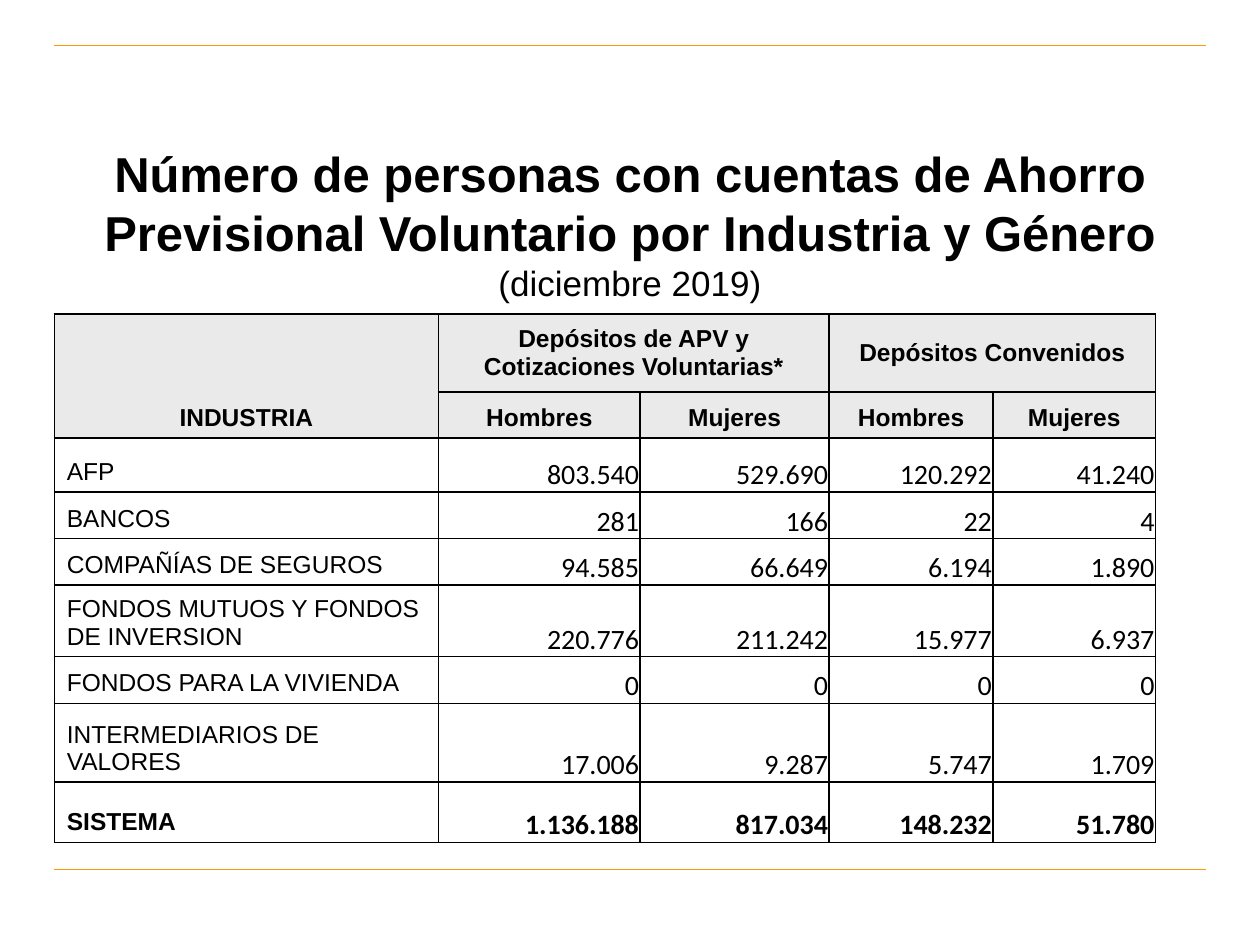
import pptx
import pptx.util
import pptx.dml.color
import pptx.enum.shapes
import pptx.enum.text
from lxml import etree

Pt = pptx.util.Pt
RGBColor = pptx.dml.color.RGBColor
ALIGN = pptx.enum.text.PP_ALIGN
ANCHOR = pptx.enum.text.MSO_ANCHOR

BLACK = RGBColor(0x00, 0x00, 0x00)
WHITE = RGBColor(0xFF, 0xFF, 0xFF)
GREY = RGBColor(0xEA, 0xEA, 0xEA)
ORANGE = RGBColor(0xFF, 0x99, 0x00)
NS = "http://schemas.openxmlformats.org/drawingml/2006/main"

# Content
TITLE = "Número de personas con cuentas de Ahorro Previsional Voluntario por Industria y Género"
SUBTITLE = "(diciembre 2019)"
ROWS = [
    ("INDUSTRIA", "Depósitos de APV y Cotizaciones Voluntarias*", "", "Depósitos Convenidos", ""),
    ("", "Hombres", "Mujeres", "Hombres", "Mujeres"),
    ("AFP", "803.540", "529.690", "120.292", "41.240"),
    ("BANCOS", "281", "166", "22", "4"),
    ("COMPAÑÍAS DE SEGUROS", "94.585", "66.649", "6.194", "1.890"),
    ("FONDOS MUTUOS Y FONDOS DE INVERSION", "220.776", "211.242", "15.977", "6.937"),
    ("FONDOS PARA LA VIVIENDA", "0", "0", "0", "0"),
    ("INTERMEDIARIOS DE VALORES", "17.006", "9.287", "5.747", "1.709"),
    ("SISTEMA", "1.136.188", "817.034", "148.232", "51.780"),
]
MERGES = [((0, 0), (1, 0)), ((0, 1), (0, 2)), ((0, 3), (0, 4))]
HEADER_ROWS = 2
COL_WIDTHS = [219.6, 115.2, 108, 93.6, 92.9]
ROW_HEIGHTS = [44.6, 26.4, 31, 26.6, 26.4, 41, 26.8, 45, 34.4]
LEFT, RIGHT = 31, 689
RULE_TOPS = (26, 496.8)
TABLE_TOP = 179.3


def set_font(font, size, name="Arial", bold=False):
    font.size, font.name, font.bold = Pt(size), name, bold
    font.color.rgb = BLACK


def set_borders(cell):
    tc_pr = cell._tc.get_or_add_tcPr()
    for side in ("lnL", "lnR", "lnT", "lnB"):
        ln = etree.SubElement(tc_pr, f"{{{NS}}}{side}", w=str(Pt(1)))
        fill = etree.SubElement(ln, f"{{{NS}}}solidFill")
        etree.SubElement(fill, f"{{{NS}}}srgbClr", val=str(BLACK))


def fill_cell(cell, text, r, c):
    header = r < HEADER_ROWS
    number = not header and c > 0
    set_borders(cell)
    if number:
        cell.fill.background()
    else:
        cell.fill.solid()
        cell.fill.fore_color.rgb = GREY if header else WHITE

    tight = number or cell.is_spanned
    cell.margin_left = cell.margin_right = Pt(0.7 if tight else 7.2)
    cell.margin_top = Pt(0.7 if tight else 3.6)
    cell.margin_bottom = Pt(0 if tight else 3.6)
    middle = r == 0 and c > 0
    cell.vertical_anchor = ANCHOR.MIDDLE if middle else ANCHOR.BOTTOM

    p = cell.text_frame.paragraphs[0]
    if text:
        p.text = text
    p.alignment = ALIGN.CENTER if header else ALIGN.RIGHT if number else ALIGN.LEFT
    bold = header or r == len(ROWS) - 1
    set_font(p.font, 16 if number else 14, "Calibri" if number else "Arial", bold)


prs = pptx.Presentation()
prs.slide_width, prs.slide_height = Pt(720), Pt(540)
s = prs.slides.add_slide(prs.slide_layouts[6])

# Rules at top and bottom
for y in RULE_TOPS:
    rule = s.shapes.add_connector(pptx.enum.shapes.MSO_CONNECTOR.STRAIGHT,
                                  Pt(LEFT), Pt(y), Pt(RIGHT), Pt(y))
    rule.line.color.rgb = ORANGE
    rule.line.width = Pt(0.75)
    etree.SubElement(rule._element.spPr, f"{{{NS}}}effectLst")

# Title
tf = s.shapes.add_textbox(Pt(36), Pt(82.8), Pt(648), Pt(90)).text_frame
tf.word_wrap = True
tf.vertical_anchor = ANCHOR.MIDDLE
p = tf.paragraphs[0]
p.alignment = ALIGN.CENTER
title = p.add_run()
title.text = TITLE
set_font(title.font, 28, bold=True)
p.add_line_break()
subtitle = p.add_run()
subtitle.text = SUBTITLE
set_font(subtitle.font, 20)

# Table
table = s.shapes.add_table(len(ROWS), len(COL_WIDTHS), Pt(LEFT), Pt(TABLE_TOP),
                           Pt(sum(COL_WIDTHS)), Pt(sum(ROW_HEIGHTS))).table
table.first_row = table.horz_banding = False
for column, width in zip(table.columns, COL_WIDTHS):
    column.width = Pt(width)
for row, height in zip(table.rows, ROW_HEIGHTS):
    row.height = Pt(height)
for first, last in MERGES:
    table.cell(*first).merge(table.cell(*last))
for r, texts in enumerate(ROWS):
    for c, text in enumerate(texts):
        fill_cell(table.cell(r, c), text, r, c)

prs.save("out.pptx")
